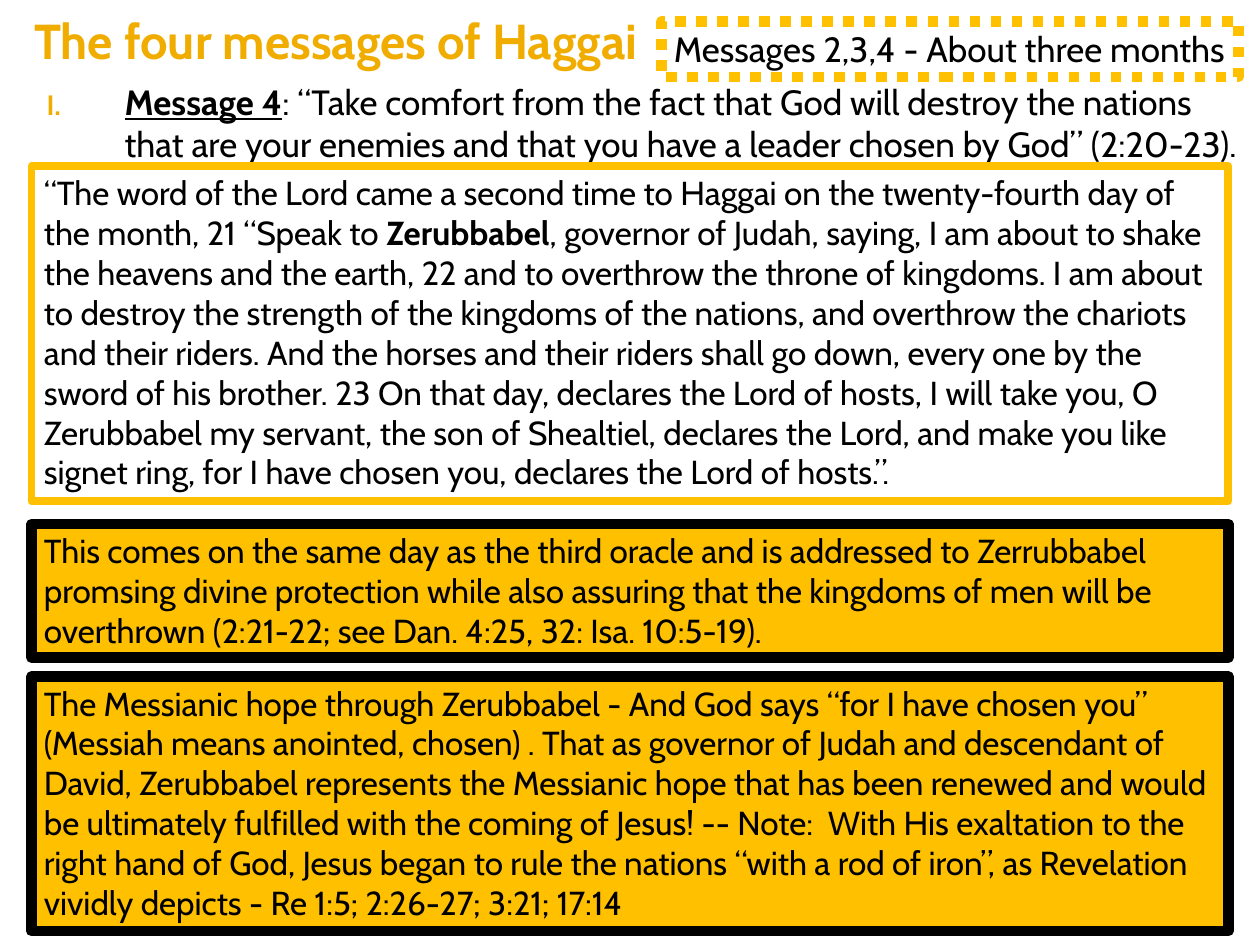
from dataclasses import dataclass

from lxml.etree import SubElement
from pptx import Presentation
from pptx.dml.color import RGBColor
from pptx.enum.dml import MSO_LINE
from pptx.enum.shapes import MSO_SHAPE
from pptx.enum.text import MSO_ANCHOR, MSO_AUTO_SIZE, PP_ALIGN
from pptx.oxml.ns import qn
from pptx.util import Inches, Pt


@dataclass(frozen=True)
class Theme:
    font: str = "Cabin"
    ink: str = "000000"
    heading: str = "F0AD00"
    gold: str = "FFC000"
    title_size: int = 28
    message_size: int = 20
    panel_size: int = 19
    gold_line: float = 4.5
    heavy_line: int = 6


THEME = Theme()
PANEL_LEFT, PANEL_WIDTH = 0.25, 9.5

MESSAGE = (
    ": “Take comfort from the fact that God will destroy the nations that are your "
    "enemies and that you have a leader chosen by God” (2:20-23)."
)
PASSAGE_START = (
    "“The word of the Lord came a second time to Haggai on the twenty-fourth day of "
    "the month, 21 “Speak to "
)
PASSAGE_END = (
    ", governor of Judah, saying, I am about to shake the heavens and the earth, 22 and "
    "to overthrow the throne of kingdoms. I am about to destroy the strength of the "
    "kingdoms of the nations, and overthrow the chariots and their riders. And the "
    "horses and their riders shall go down, every one by the sword of his brother. 23 On "
    "that day, declares the Lord of hosts, I will take you, O Zerubbabel my servant, the "
    "son of Shealtiel, declares the Lord, and make you like signet ring, for I have "
    "chosen you, declares the Lord of hosts.”."
)
SETTING = (
    "This comes on the same day as the third oracle and is addressed to Zerrubbabel "
    "promsing divine protection while also assuring that the kingdoms of men will be "
    "overthrown (2:21-22; see Dan. 4:25, 32: Isa. 10:5-19)."
)
HOPE = (
    "The Messianic hope through Zerubbabel - And God says “for I have chosen you” "
    "(Messiah means anointed, chosen) . That as governor of Judah and descendant of "
    "David, Zerubbabel represents the Messianic hope that has been renewed and would be "
    "ultimately fulfilled with the coming of Jesus! -- Note:  With His exaltation to the "
    "right hand of God, Jesus began to rule the nations “with a rod of iron”, as "
    "Revelation vividly depicts - Re 1:5; 2:26-27; 3:21; 17:14"
)


def color(value):
    return RGBColor.from_string(value)


def add_text(para, text, size=THEME.panel_size, ink=THEME.ink, bold=False, underline=False):
    span = para.add_run()
    span.text = text
    span.font.name = THEME.font
    span.font.size = Pt(size)
    span.font.color.rgb = color(ink)
    span.font.bold = bold
    span.font.underline = underline


def set_margins(frame, left, top, right, bottom):
    frame.margin_left, frame.margin_top = Inches(left), Inches(top)
    frame.margin_right, frame.margin_bottom = Inches(right), Inches(bottom)


def number_paragraph(para, margin, indent):
    properties = para._p.get_or_add_pPr()
    properties.set("marL", str(Inches(margin)))
    properties.set("indent", str(Inches(indent)))
    bullet_color = SubElement(properties, qn("a:buClr"))
    SubElement(bullet_color, qn("a:srgbClr"), val=THEME.heading)
    SubElement(properties, qn("a:buSzPct"), val="80000")
    SubElement(properties, qn("a:buFont"), typeface=THEME.font)
    SubElement(properties, qn("a:buAutoNum"), type="romanUcPeriod")


def add_title(page, left, top, width, height):
    title = page.shapes.title
    title.left, title.top = Inches(left), Inches(top)
    title.width, title.height = Inches(width), Inches(height)
    frame = title.text_frame
    frame.vertical_anchor = MSO_ANCHOR.MIDDLE
    set_margins(frame, 0.1, 0.05, 0.05, 0.05)
    para = frame.paragraphs[0]
    para.alignment = PP_ALIGN.LEFT
    add_text(para, "The four messages of Haggai", size=THEME.title_size,
             ink=THEME.heading, bold=True)


def add_message(page, left, top, width, height):
    box = page.shapes.add_textbox(Inches(left), Inches(top), Inches(width), Inches(height))
    frame = box.text_frame
    frame.word_wrap = True
    set_margins(frame, 0.06, 0.1, 0.1, 0.05)
    para = frame.paragraphs[0]
    number_paragraph(para, margin=0.76, indent=-0.62)
    add_text(para, "Message 4", size=THEME.message_size, bold=True, underline=True)
    add_text(para, MESSAGE, size=THEME.message_size)


def add_panel(page, left, top, width, height, line, line_width, fill=None, dash=None):
    box = page.shapes.add_shape(MSO_SHAPE.RECTANGLE, Inches(left), Inches(top),
                                Inches(width), Inches(height))
    box.shadow.inherit = False
    if fill:
        box.fill.solid()
        box.fill.fore_color.rgb = color(fill)
    else:
        box.fill.background()
    box.line.color.rgb = color(line)
    box.line.width = Pt(line_width)
    if dash:
        box.line.dash_style = dash
    frame = box.text_frame
    frame.word_wrap = True
    frame.auto_size = MSO_AUTO_SIZE.SHAPE_TO_FIT_TEXT
    frame.vertical_anchor = MSO_ANCHOR.TOP
    para = frame.paragraphs[0]
    para.alignment = PP_ALIGN.LEFT
    return para


def add_passage(page, left, top, width, height):
    para = add_panel(page, left, top, width, height, THEME.gold, THEME.gold_line)
    add_text(para, PASSAGE_START)
    add_text(para, "Zerubbabel", bold=True)
    add_text(para, PASSAGE_END)


def add_comment(page, text, left, top, width, height):
    para = add_panel(page, left, top, width, height, THEME.ink, THEME.heavy_line,
                     fill=THEME.gold)
    add_text(para, text)


def add_period(page, left, top, width, height):
    para = add_panel(page, left, top, width, height, THEME.gold, THEME.heavy_line,
                     dash=MSO_LINE.ROUND_DOT)
    add_text(para, "Messages 2,3,4 - About three months", size=THEME.message_size)


def main():
    deck = Presentation()
    deck.slide_width, deck.slide_height = Inches(10), Inches(7.5)
    page = deck.slides.add_slide(deck.slide_layouts[5])
    add_title(page, 0.17, -0.12, 9, 0.87)
    add_message(page, 0.17, 0.54, 9.83, 6.41)
    add_passage(page, PANEL_LEFT, 1.32, PANEL_WIDTH, 2.66)
    for text, top, height in ((SETTING, 4.16, 1.06), (HOPE, 5.37, 2.02)):
        add_comment(page, text, PANEL_LEFT, top, PANEL_WIDTH, height)
    add_period(page, 5.25, 0.17, 4.58, 0.44)
    deck.save("out.pptx")


if __name__ == "__main__":
    main()
